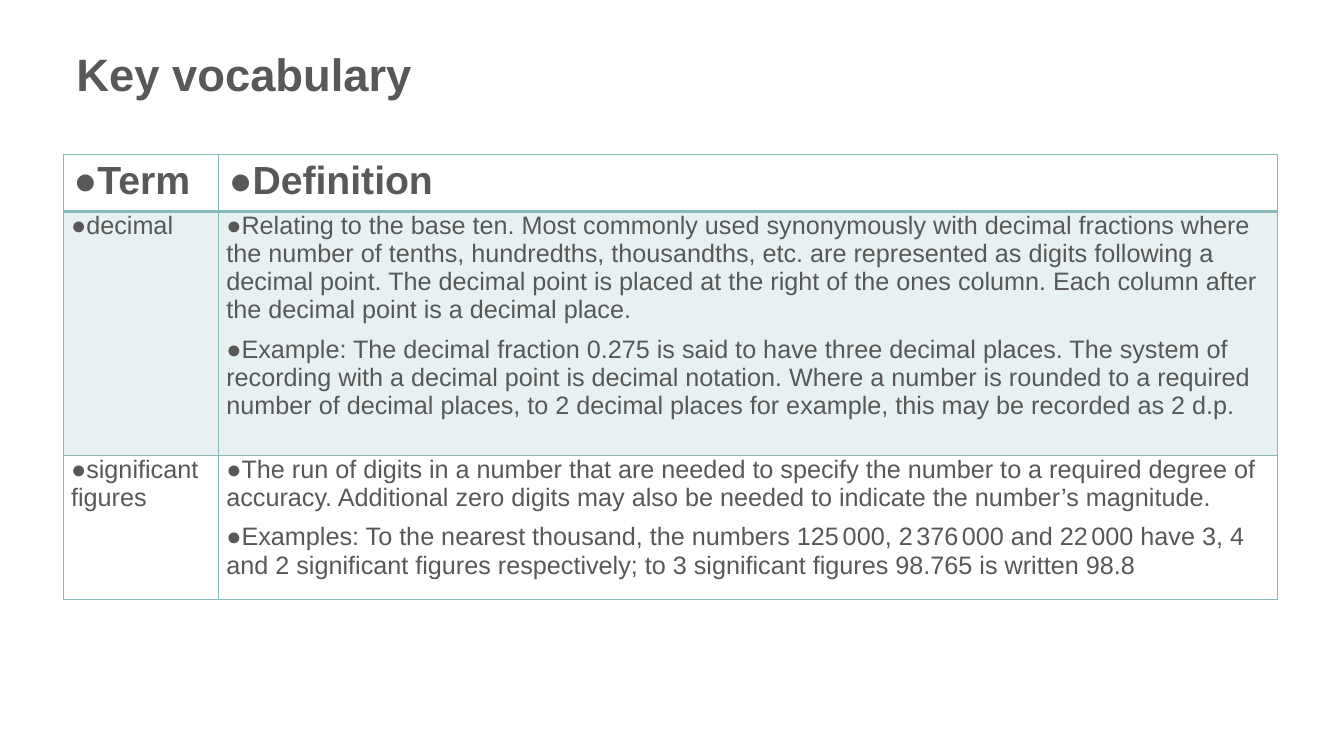
from dataclasses import dataclass
from itertools import product

from lxml.etree import SubElement
from pptx import Presentation
from pptx.dml.color import RGBColor as RGB
from pptx.enum.text import MSO_ANCHOR as Anchor
from pptx.oxml.ns import qn
from pptx.util import Pt

# An underscore marks the narrow gap between groups of digits.
VOCABULARY = [
    (["Term"], ["Definition"]),
    (["decimal"], [
        "Relating to the base ten. Most commonly used synonymously with decimal "
        "fractions where the number of tenths, hundredths, thousandths, etc. are "
        "represented as digits following a decimal point. The decimal point is "
        "placed at the right of the ones column. Each column after the decimal "
        "point is a decimal place.",
        "Example: The decimal fraction 0.275 is said to have three decimal places. "
        "The system of recording with a decimal point is decimal notation. Where a "
        "number is rounded to a required number of decimal places, to 2 decimal "
        "places for example, this may be recorded as 2 d.p.",
    ]),
    (["significant figures"], [
        "The run of digits in a number that are needed to specify the number to a "
        "required degree of accuracy. Additional zero digits may also be needed to "
        "indicate the number’s magnitude.",
        "Examples: To the nearest thousand, the numbers 125_000, 2_376_000 and "
        "22_000 have 3, 4 and 2 significant figures respectively; to 3 significant "
        "figures 98.765 is written 98.8",
    ]),
]
DIGIT_GAP = " "


@dataclass(frozen=True)
class Theme:
    font: str = "Arial"
    ink: str = "585858"
    accent: str = "8AB9B9"
    band_opacity: int = 20
    title_size: float = 32.4
    header_size: float = 28
    body_size: float = 18
    gap_size: float = 9
    rule: float = 1
    header_rule: float = 2


class VocabularySlide:
    def __init__(self, slide, theme):
        self.slide = slide
        self.theme = theme

    def run(self, paragraph, text, size, bold=False):
        run = paragraph.add_run()
        run.text = text
        font = run.font
        font.name, font.size, font.bold = self.theme.font, Pt(size), bold
        font.color.rgb = RGB.from_string(self.theme.ink)

    def title(self, text, left, top, width, height):
        frame = self.slide.shapes.add_textbox(
            Pt(left), Pt(top), Pt(width), Pt(height)).text_frame
        frame.word_wrap = True
        frame.vertical_anchor = Anchor.TOP
        frame.paragraphs[0].line_spacing = 0.9
        self.run(frame.paragraphs[0], text, self.theme.title_size, bold=True)

    def bullet(self, paragraph):
        properties = paragraph._p.get_or_add_pPr()
        properties.set("marL", "0")
        properties.set("indent", "0")
        SubElement(properties, qn("a:buFont")).set("typeface", self.theme.font)
        SubElement(properties, qn("a:buChar")).set("char", "●")

    def borders(self, cell, top, bottom):
        properties = cell._tc.get_or_add_tcPr()
        rule = self.theme.rule
        for side, width in zip("LRTB", (rule, rule, top, bottom)):
            line = SubElement(properties, qn(f"a:ln{side}"), w=str(Pt(width)))
            fill = SubElement(line, qn("a:solidFill"))
            SubElement(fill, qn("a:srgbClr")).set("val", self.theme.accent)

    def band(self, cell):
        """Fill the cell with a transparent tint of the accent colour."""
        cell.fill.solid()
        cell.fill.fore_color.rgb = RGB.from_string(self.theme.accent)
        colour = next(cell._tc.tcPr.find(qn("a:solidFill")).iterchildren())
        SubElement(colour, qn("a:alpha")).set(
            "val", str(self.theme.band_opacity * 1000))

    def cell_text(self, cell, entries, size, bold):
        frame = cell.text_frame
        for index, entry in enumerate(entries):
            paragraph = frame.add_paragraph() if index else frame.paragraphs[0]
            self.bullet(paragraph)
            if index:
                paragraph.space_before = Pt(4)
            if not bold:
                paragraph.space_after = Pt(4)
            for part, words in enumerate(entry.split("_")):
                if part:
                    self.run(paragraph, DIGIT_GAP, self.theme.gap_size)
                self.run(paragraph, words, size, bold)

    def table(self, rows, left, top, widths, heights):
        theme = self.theme
        table = self.slide.shapes.add_table(
            len(rows), len(widths), Pt(left), Pt(top),
            Pt(sum(widths)), Pt(sum(heights))).table
        table.first_row = table.horz_banding = False
        for column, width in zip(table.columns, widths):
            column.width = Pt(width)
        for row, height in zip(table.rows, heights):
            row.height = Pt(height)
        for r, c in product(range(len(rows)), range(len(widths))):
            cell = table.cell(r, c)
            header = r == 0
            if not header:
                cell.margin_left = cell.margin_right = Pt(5.4)
                cell.margin_top = cell.margin_bottom = 0
            self.borders(cell,
                         top=theme.header_rule if r == 1 else theme.rule,
                         bottom=theme.header_rule if header else theme.rule)
            if r % 2:
                self.band(cell)
            else:
                cell.fill.background()
            size = theme.header_size if header else theme.body_size
            self.cell_text(cell, rows[r][c], size, bold=header)


def main():
    deck = Presentation()
    deck.slide_width, deck.slide_height = Pt(960), Pt(540)
    page = VocabularySlide(deck.slides.add_slide(deck.slide_layouts[6]), Theme())
    page.title("Key vocabulary", 47.5, 33.8, 864, 77)
    page.table(VOCABULARY, 45.4, 110.2, widths=(110.9, 756), heights=(35.3, 174.2, 103))
    deck.save("out.pptx")


if __name__ == "__main__":
    main()
